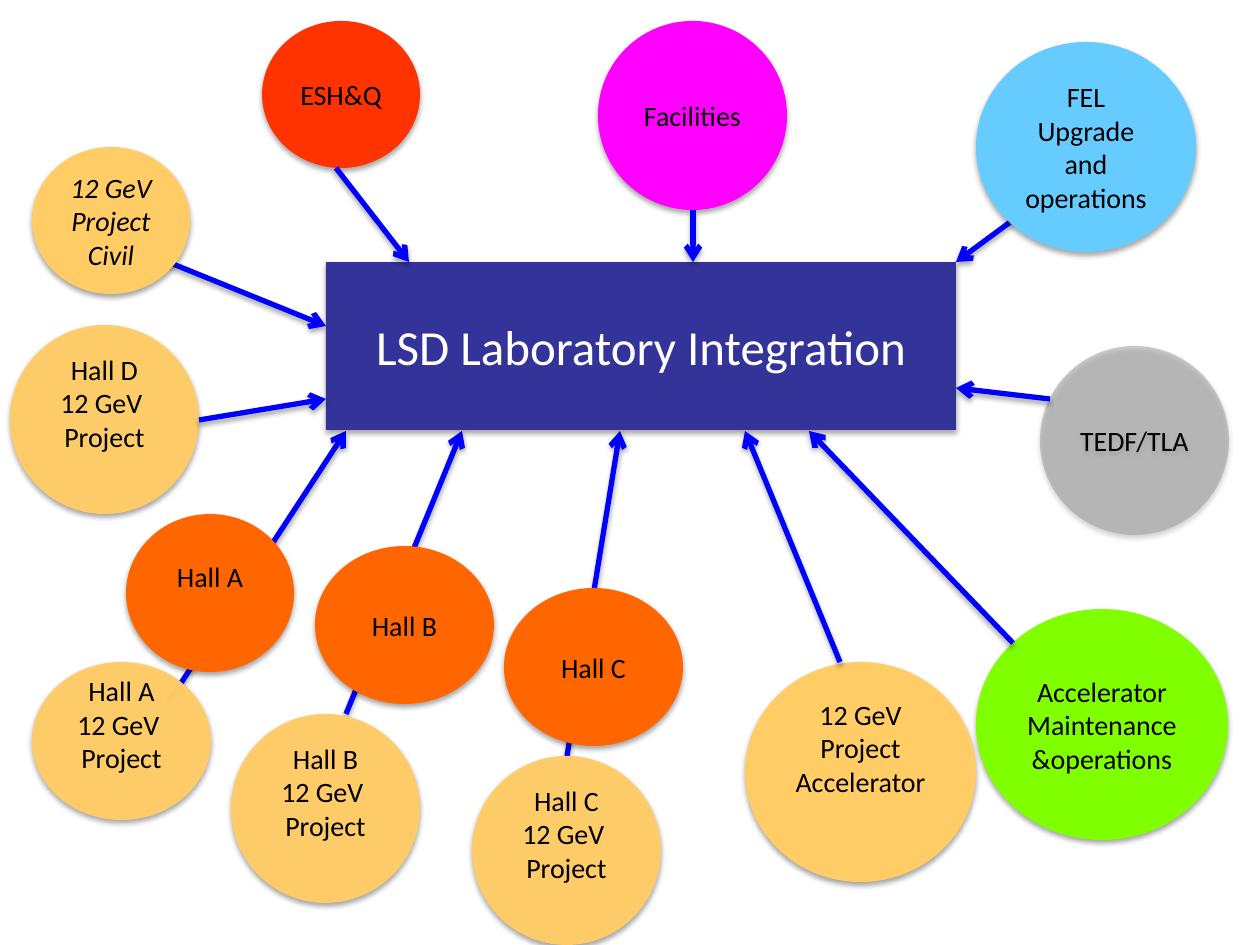
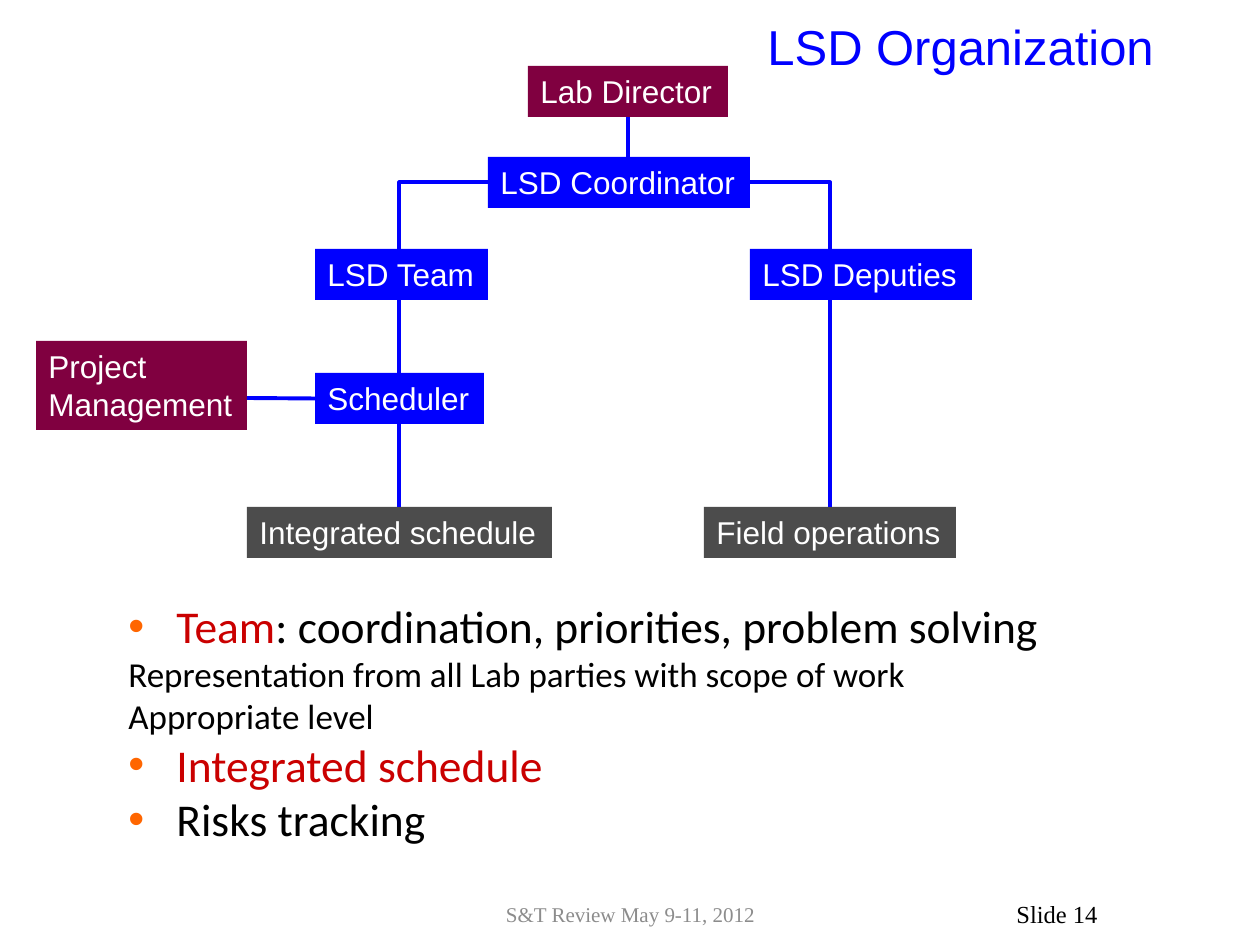
from lxml import etree
from pptx import Presentation
from pptx.dml.color import RGBColor
from pptx.enum import shapes, text
from pptx.oxml.ns import qn
from pptx.util import Emu, Pt

PX = 914400 / 126
BLUE = RGBColor(0x00, 0x00, 0xFF)
NAVY = RGBColor(0x33, 0x33, 0x99)
RED = RGBColor(0xFF, 0x33, 0x00)
MAGENTA = RGBColor(0xFF, 0x00, 0xFF)
SKY = RGBColor(0x66, 0xCC, 0xFF)
SAND = RGBColor(0xFF, 0xCC, 0x66)
ORANGE = RGBColor(0xFF, 0x66, 0x00)
LIME = RGBColor(0x80, 0xFF, 0x00)
GREY = RGBColor(0x99, 0x99, 0x99)
MAROON = RGBColor(0x80, 0x00, 0x40)
CHARCOAL = RGBColor(0x4C, 0x4C, 0x4C)
CRIMSON = RGBColor(0xCA, 0x00, 0x00)
FOOTER_GREY = RGBColor(0x8C, 0x8C, 0x8C)
BLACK = RGBColor(0x00, 0x00, 0x00)
WHITE = RGBColor(0xFF, 0xFF, 0xFF)
SANS, BODY, SERIF = "Arial", "Calibri", "Times New Roman"
LEFT, CENTER, RIGHT = text.PP_ALIGN.LEFT, text.PP_ALIGN.CENTER, text.PP_ALIGN.RIGHT
TOP, MIDDLE = text.MSO_ANCHOR.TOP, text.MSO_ANCHOR.MIDDLE
OVAL, RECT = shapes.MSO_SHAPE.OVAL, shapes.MSO_SHAPE.RECTANGLE
STRAIGHT, ELBOW = shapes.MSO_CONNECTOR.STRAIGHT, shapes.MSO_CONNECTOR.ELBOW


def px(*values):
    """Turn px lengths into EMU."""
    return [Emu(round(v * PX)) for v in values]


def child(parent, tag, **attrs):
    """Append a drawing element to a parent."""
    el = etree.SubElement(parent, qn(f"a:{tag}"))
    for name, value in attrs.items():
        el.set(name, str(value))
    return el


def drop_shadow(effects):
    """Put a soft downward shadow in an effect list."""
    shadow = child(effects, "outerShdw", blurRad=Pt(3.1), dist=Pt(1.8),
                   dir=5400000, rotWithShape=0)
    child(child(shadow, "srgbClr", val="000000"), "alpha", val=35000)


def add_run(p, words, size, font, color, italic=False):
    """Add one formatted run to a paragraph."""
    r = p.add_run()
    r.text = words
    r.font.size, r.font.name, r.font.italic = Pt(size), font, italic
    r.font.color.rgb = color


def write(tf, lines, size, font, color, align, anchor=MIDDLE, wrap=True, italic=False):
    """Fill a text frame with one paragraph per line."""
    tf.word_wrap, tf.vertical_anchor = wrap, anchor
    for i, line in enumerate(lines):
        p = tf.add_paragraph() if i else tf.paragraphs[0]
        p.alignment = align
        add_run(p, line, size, font, color, italic)


def add_block(slide, kind, box, fill, alpha=100, shadow=False):
    """Add a filled shape without outline."""
    sp = slide.shapes.add_shape(kind, *px(*box))
    sp.fill.solid()
    sp.fill.fore_color.rgb = fill
    sp.line.fill.background()
    sp.shadow.inherit = False
    props = sp.element.spPr
    if alpha < 100:
        child(props.find(f"{qn('a:solidFill')}/{qn('a:srgbClr')}"), "alpha", val=alpha * 1000)
    if shadow:
        drop_shadow(props.find(qn("a:effectLst")))
    return sp


def add_link(slide, kind, ends, width, arrow=False):
    """Add a blue connector, with arrowhead and shadow if asked."""
    link = slide.shapes.add_connector(kind, *px(*ends))
    link.line.color.rgb = BLUE
    link.line.width = Pt(width)
    props = link.element.spPr
    effects = child(props, "effectLst")
    if arrow:
        child(props.find(qn("a:ln")), "tailEnd", type="arrow")
        drop_shadow(effects)
    return link


def add_label(slide, box, words, size, font, color, align):
    """Add a one-line text box."""
    tf = slide.shapes.add_textbox(*px(*box)).text_frame
    write(tf, [words], size, font, color, align)


def integration_map(slide, box):
    """Draw the integration block with the parties that feed it."""
    x, y, w, h = box
    project = ["12 GeV ", "Project"]
    arrows_behind = [
        (168, 703, 346, 431), (346, 714, 462, 431), (567, 756, 620, 431),
        (168, 262, 326, 326), (1013, 220, 956, 262)]
    arrows_front = [
        (840, 662, 745, 431), (1013, 643, 809, 431), (1050, 399, 956, 388),
        (336, 168, 409, 262), (199, 420, 326, 399), (693, 210, 693, 262)]
    parties = [
        (504, 588, 179, 158, ORANGE, 100, 0, ["Hall C"]),
        (745, 662, 231, 220, SAND, 100, 49, ["12 GeV Project Accelerator"]),
        (315, 546, 179, 158, ORANGE, 100, 0, ["Hall B"]),
        (126, 514, 168, 158, ORANGE, 100, 34, ["Hall A"]),
        (32, 147, 158, 147, SAND, 100, 0, ["12 GeV Project", "Civil"]),
        (262, 21, 158, 147, RED, 100, 0, ["ESH&Q"]),
        (976, 609, 252, 231, LIME, 100, 0, ["Accelerator Maintenance", "&operations"]),
        (976, 42, 220, 210, SKY, 100, 0, ["FEL", "Upgrade", "and operations"]),
        (598, 21, 189, 189, MAGENTA, 100, 0, ["Facilities"]),
        (32, 662, 179, 158, SAND, 98, 34, ["Hall A", *project]),
        (231, 714, 189, 189, SAND, 98, 34, ["Hall B", *project]),
        (472, 756, 189, 189, SAND, 98, 34, ["Hall C", *project]),
        (10, 325, 189, 189, SAND, 98, 34, ["Hall D", *project]),
        (1040, 346, 189, 189, GREY, 50, 0, ["TEDF/TLA"])]

    def draw_arrows(arrows):
        """Draw arrows that point at the integration block."""
        for x1, y1, x2, y2 in arrows:
            add_link(slide, STRAIGHT, (x + x1, y + y1, x + x2, y + y2), 3, arrow=True)

    draw_arrows(arrows_behind)
    hub = add_block(slide, RECT, (x + 326, y + 262, w // 2, 168), NAVY, shadow=True)
    write(hub.text_frame, ["LSD Laboratory Integration"], 28, BODY, WHITE, CENTER)
    for left, top, width, height, fill, alpha, lift, lines in parties:
        sp = add_block(slide, OVAL, (x + left, y + top, width, height), fill, alpha, shadow=True)
        tf = sp.text_frame
        tf.margin_top, tf.margin_bottom = px(0, lift)
        write(tf, lines, 16, BODY, BLACK, CENTER, italic="Civil" in lines)
    draw_arrows(arrows_front)


def org_chart(slide, box):
    """Draw the organization boxes and their links."""
    x, y, w, h = box
    row = 51

    def unit(left, top, width, fill, *lines, height=row):
        """Draw one organization box."""
        sp = add_block(slide, RECT, (x + left, y + top, width, height), fill)
        write(sp.text_frame, lines, 18, SANS, WHITE, LEFT, TOP, wrap=False)
        sp.text_frame.auto_size = text.MSO_AUTO_SIZE.SHAPE_TO_FIT_TEXT
        return sp

    def link(kind, x1, y1, x2, y2):
        """Draw one link inside the chart."""
        return add_link(slide, kind, (x + x1, y + y1, x + x2, y + y2), 2.25)

    coordinator = unit(452, 91, 262, BLUE, "LSD Coordinator")
    schedule = unit(211, h - row, 305, CHARCOAL, "Integrated schedule")
    field = unit(668, h - row, 252, CHARCOAL, "Field operations")
    for side, start, goal, end in ((3, 714, field, 794), (1, 452, schedule, 363)):
        branch = link(ELBOW, start, 117, end, h - row)
        branch.element.spPr.find(qn("a:prstGeom")).set("prst", "bentConnector2")
        branch.begin_connect(coordinator, side)
        branch.end_connect(goal, 0)
    unit(279, 183, 173, BLUE, "LSD Team")
    unit(w - 222, 183, 222, BLUE, "LSD Deputies")
    unit(0, 275, 211, MAROON, "Project", "Management", height=89)
    scheduler = unit(279, 307, 169, BLUE, "Scheduler")
    director = unit(492, 0, 200, MAROON, "Lab Director")
    link(STRAIGHT, 592, row, 592, 91).begin_connect(director, 2)
    link(STRAIGHT, 211, 332, 279, 332).end_connect(scheduler, 1)


def key_points(slide, box):
    """Write the bulleted points under the chart."""
    tf = slide.shapes.add_textbox(*px(*box)).text_frame
    tf.word_wrap = True
    points = [
        (True, 26, [("Team", CRIMSON), (": coordination, priorities, problem solving", BLACK)]),
        (False, 20, [("Representation from all Lab parties with scope of work", BLACK)]),
        (False, 20, [("Appropriate level", BLACK)]),
        (True, 26, [("Integrated schedule", CRIMSON)]),
        (True, 26, [("Risks tracking", BLACK)])]
    indent, = px(48)
    for i, (bullet, size, runs) in enumerate(points):
        p = tf.add_paragraph() if i else tf.paragraphs[0]
        props = p._p.get_or_add_pPr()
        props.set("marL", str(indent))
        props.set("indent", str(-indent))
        if bullet:
            child(child(props, "buClr"), "srgbClr", val=ORANGE)
            child(props, "buFont", typeface=SANS)
            child(props, "buChar", char="•")
        else:
            child(props, "buNone")
        for words, color in runs:
            add_run(p, words, size, BODY, color)


def footer(slide, box):
    """Write the event and the slide number."""
    x, y, w, h = box
    add_label(slide, (x, y, 399, h), "S&T Review May 9-11, 2012", 12, SERIF, FOOTER_GREY, CENTER)
    add_label(slide, (x + w - 294, y, 294, h), "Slide 14", 14, SERIF, BLACK, RIGHT)


def main():
    """Build both slides and save them."""
    prs = Presentation()
    prs.slide_width, prs.slide_height = px(1260, 945)
    blank = prs.slide_layouts[6]
    integration_map(prs.slides.add_slide(blank), (0, 0, 1260, 945))
    s = prs.slides.add_slide(blank)
    add_label(s, (95, 0, 1071, 91), "LSD Organization", 28, SANS, BLUE, RIGHT)
    org_chart(s, (36, 66, 936, 492))
    key_points(s, (116, 592, 1089, 257))
    footer(s, (431, 889, 679, 50))
    prs.save("out.pptx")


if __name__ == "__main__":
    main()
